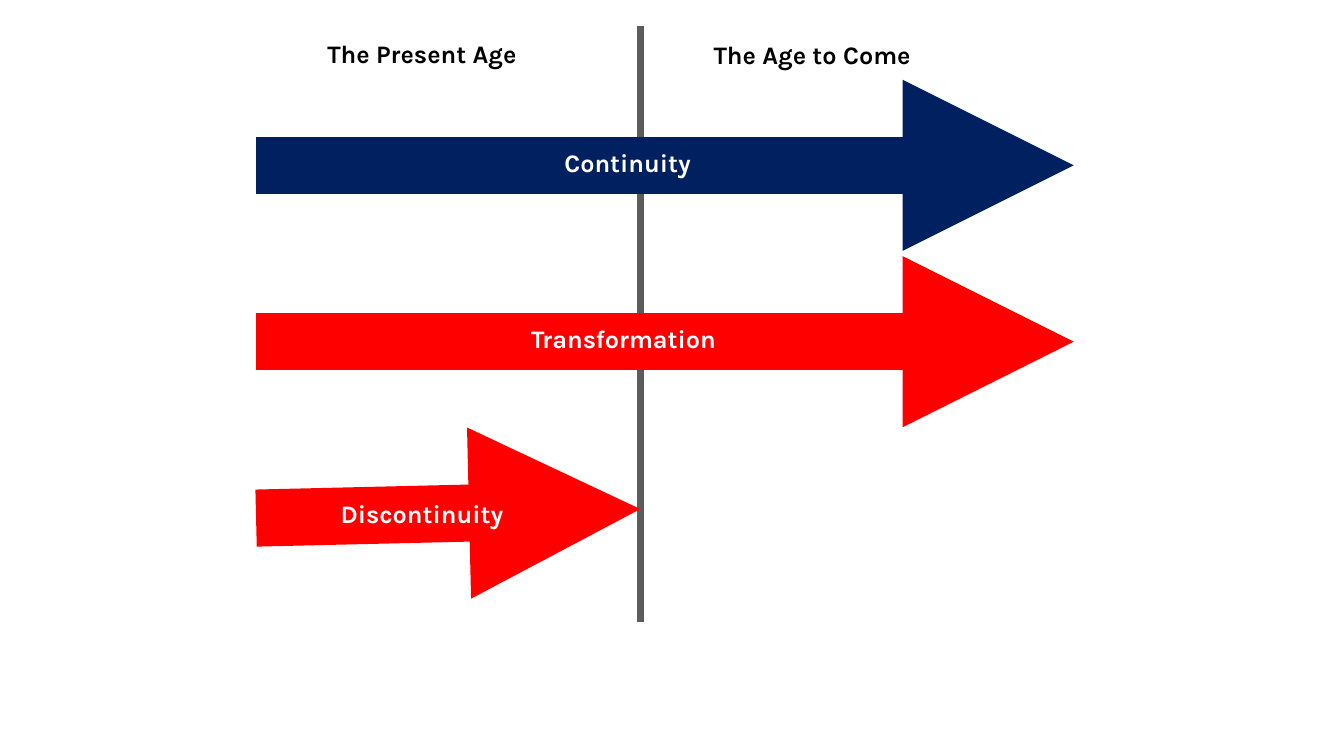
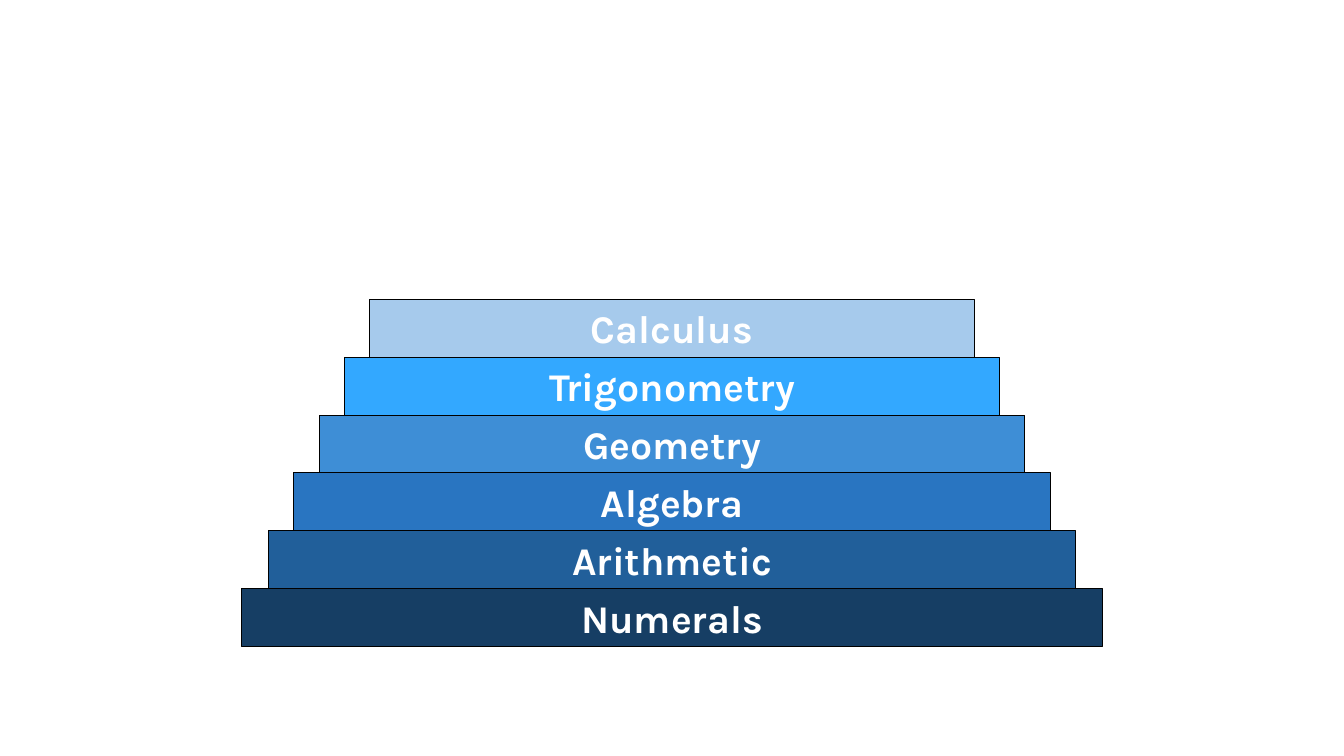
from lxml.etree import SubElement
from pptx import Presentation
from pptx.dml.color import RGBColor
from pptx.enum.shapes import MSO_CONNECTOR, MSO_SHAPE
from pptx.enum.text import MSO_ANCHOR, PP_ALIGN
from pptx.oxml import parse_xml
from pptx.oxml.ns import nsdecls, qn
from pptx.util import Inches, Pt

WIDTH, HEIGHT = 13.33, 7.5
FONT = "Karla"
BLACK, WHITE, NAVY, RED = "000000", "FFFFFF", "002060", "FF0000"

# White veil over the left side: (position %, opacity %), from right to left
VEIL_WIDTH = 0.58 * WIDTH
VEIL_STOPS = [(0, 0), (19, 38), (35, 77), (48, 100), (100, 100)]

# Ages slide: start and boundary of the present age, end of the age to come
START, BOUNDARY, END = 2.54, 6.35, 10.65
LABEL_W, LABEL_H = 3.17, 0.4
AGES = [("The Present Age", 2.6, 0.33), ("The Age to Come", 6.47, 0.34)]
# label, colour, end x, start y, end y, label left, label top
ARROWS = [
    ("Continuity", NAVY, END, 1.64, 1.64, 4.64, 1.41),
    ("Transformation", RED, END, 3.39, 3.39, 4.6, 3.16),
    ("Discontinuity", RED, BOUNDARY, 5.14, 5.05, 2.6, 4.89),
]

# Mathematics slide: steps from the top down, centred on the slide
STEPS = [
    ("Calculus", "A6CAEC", 6),
    ("Trigonometry", "33A8FF", 6.5),
    ("Geometry", "3E8ED6", 7),
    ("Algebra", "2975C1", 7.5),
    ("Arithmetic", "215F9A", 8),
    ("Numerals", "163E64", 8.54),
]
STEPS_TOP, STEP_H = 2.97, 0.574


def rgb(value):
    return RGBColor.from_string(value)


def write(shape, text, size, color):
    tf = shape.text_frame
    tf.word_wrap = True
    p = tf.paragraphs[0]
    p.text = text
    p.alignment = PP_ALIGN.CENTER
    p.font.name, p.font.size, p.font.bold = FONT, Pt(size), True
    p.font.color.rgb = rgb(color)
    return tf


def add_label(s, text, left, top, color):
    box = s.shapes.add_textbox(*map(Inches, (left, top, LABEL_W, LABEL_H)))
    write(box, text, 18, color)


def add_rect(s, left, top, width, height):
    rect = s.shapes.add_shape(
        MSO_SHAPE.RECTANGLE, *map(Inches, (left, top, width, height)))
    rect.shadow.inherit = False
    return rect


def add_line(s, x1, y1, x2, y2, color, weight, arrow=False):
    line = s.shapes.add_connector(
        MSO_CONNECTOR.STRAIGHT, *map(Inches, (x1, y1, x2, y2)))
    line.line.color.rgb = rgb(color)
    line.line.width = Pt(weight)
    if arrow:
        SubElement(line.line._get_or_add_ln(), qn("a:tailEnd"), type="triangle")
    SubElement(line._element.spPr, qn("a:effectLst"))


def add_veil(s):
    veil = add_rect(s, 0, 0, VEIL_WIDTH, HEIGHT)
    veil.line.fill.background()
    stops = "".join(
        f'<a:gs pos="{pos * 1000}"><a:srgbClr val="{WHITE}">'
        f'<a:alpha val="{opacity * 1000}"/></a:srgbClr></a:gs>'
        for pos, opacity in VEIL_STOPS)
    veil._element.spPr.find(qn("a:prstGeom")).addnext(parse_xml(
        f'<a:gradFill {nsdecls("a")}><a:gsLst>{stops}</a:gsLst>'
        '<a:lin ang="10800000" scaled="0"/></a:gradFill>'))


def build_ages(s):
    add_line(s, BOUNDARY, 0.26, BOUNDARY, 6.17, BLACK, 5.25)
    add_veil(s)
    for text, left, top in AGES:
        add_label(s, text, left, top, BLACK)
    for text, color, end, y1, y2, left, top in ARROWS:
        add_line(s, START, y1, end, y2, color, 40.75, arrow=True)
        add_label(s, text, left, top, WHITE)


def build_steps(s):
    add_veil(s)
    for i, (text, color, width) in enumerate(STEPS):
        step = add_rect(s, (WIDTH - width) / 2, STEPS_TOP + i * STEP_H,
                        width, STEP_H)
        step.fill.solid()
        step.fill.fore_color.rgb = rgb(color)
        step.line.color.rgb = rgb(BLACK)
        step.line.width = Pt(0.75)
        write(step, text, 28, WHITE).vertical_anchor = MSO_ANCHOR.MIDDLE


def main():
    prs = Presentation()
    prs.slide_width, prs.slide_height = Inches(WIDTH), Inches(HEIGHT)
    for build in (build_ages, build_steps):
        build(prs.slides.add_slide(prs.slide_layouts[6]))
    prs.save("out.pptx")


if __name__ == "__main__":
    main()
